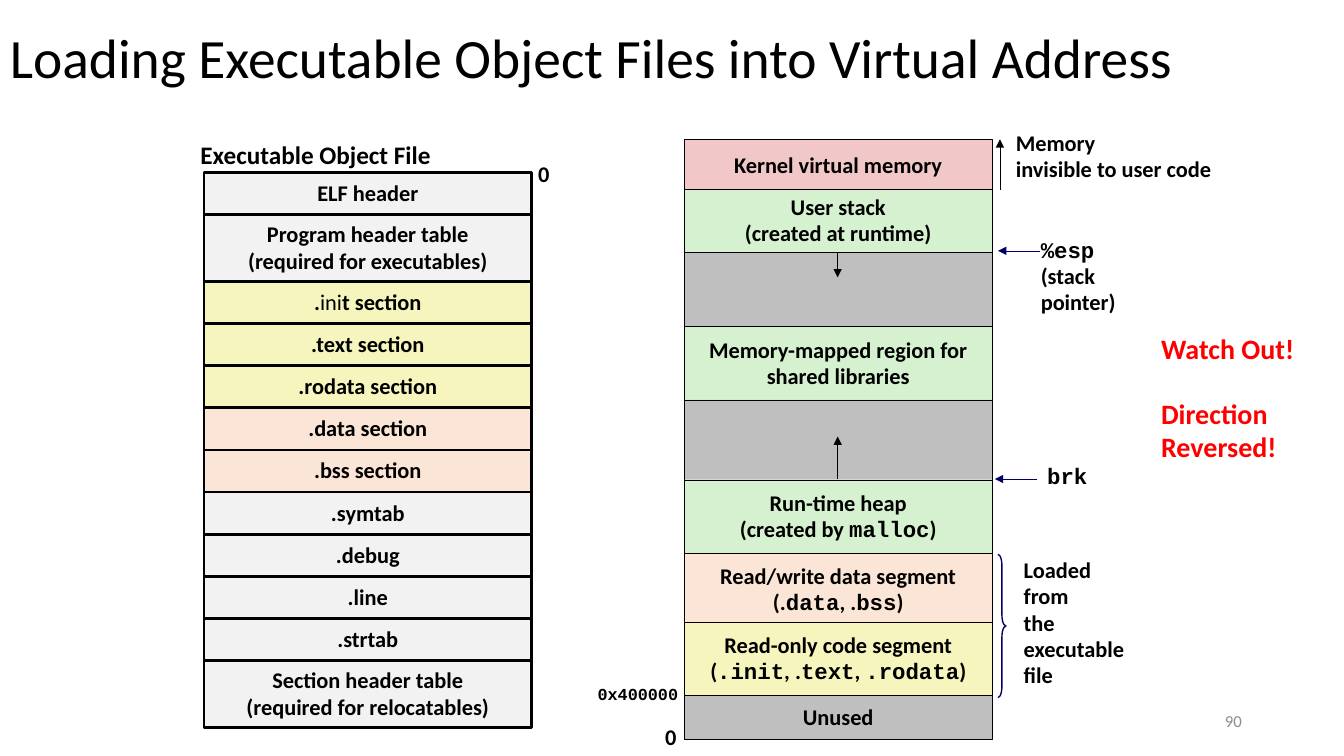
import pptx
import pptx.util
import pptx.dml.color
import pptx.enum.shapes
import pptx.enum.text
import pptx.oxml
import pptx.oxml.ns

Cm, Pt = pptx.util.Cm, pptx.util.Pt
RGBColor = pptx.dml.color.RGBColor
MSO_SHAPE = pptx.enum.shapes.MSO_SHAPE
PP_ALIGN = pptx.enum.text.PP_ALIGN
MSO_ANCHOR = pptx.enum.text.MSO_ANCHOR
MSO_AUTO_SIZE = pptx.enum.text.MSO_AUTO_SIZE

BLACK = RGBColor(0x00, 0x00, 0x00)
NAVY = RGBColor(0x00, 0x00, 0x66)
RED = RGBColor(0xFF, 0x00, 0x00)
MUTED = RGBColor(0x8C, 0x8C, 0x8C)
LIGHT = RGBColor(0xF2, 0xF2, 0xF2)
GRAY = RGBColor(0xBF, 0xBF, 0xBF)
YELLOW = RGBColor(0xF6, 0xF5, 0xBD)
PEACH = RGBColor(0xFB, 0xE5, 0xD6)
GREEN = RGBColor(0xD5, 0xF1, 0xCF)
PINK = RGBColor(0xF1, 0xC7, 0xC7)

BODY_FONT, CODE_FONT = "Calibri", "Courier New"
CODE_MARK, THIN_MARK = "`", "~"

TITLE = "Loading Executable Object Files into Virtual Address"

FILE_SECTIONS = [
    (["ELF header"], LIGHT),
    (["Program header table", "(required for executables)"], LIGHT),
    ([".~ini~t section"], YELLOW),
    ([".text section"], YELLOW),
    ([".rodata section"], YELLOW),
    ([".data section"], PEACH),
    ([".bss section"], PEACH),
    ([".symtab"], LIGHT),
    ([".debug"], LIGHT),
    ([".line"], LIGHT),
    ([".strtab"], LIGHT),
    (["Section header table", "(required for relocatables)"], LIGHT),
]
FILE_LEFT, FILE_TOP, FILE_WIDTH = 5.14, 4.34, 8.26
ROW_HEIGHTS = {1: 1.06, 2: 1.7}

MEMORY_REGIONS = [
    (3.51, 1.34, ["Kernel virtual memory"], PINK),
    (6.35, 1.88, [], GRAY),
    (4.78, 1.57, ["User stack", "(created at runtime)"], GREEN),
    (8.23, 1.85, ["Memory-mapped region for", "shared libraries"], GREEN),
    (10.08, 2.01, [], GRAY),
    (12.09, 1.85, ["Run-time heap", "(created by `malloc`)"], GREEN),
    (13.94, 1.85, ["Read/write data segment", "(.`data`, .`bss`)"], PEACH),
    (15.67, 1.85, ["Read-only code segment", "(`.init`, .`text`, `.rodata`)"], YELLOW),
    (17.52, 1.1, ["Unused"], GRAY),
]
MEMORY_LEFT, MEMORY_WIDTH = 17.25, 7.75
MEMORY_MIDDLE = 21.11

LABELS = [
    (4.78, 3.43, 6.35, 1.02, ["Executable Object File"], 18, PP_ALIGN.CENTER),
    (13.31, 3.94, 0.79, 0.94, ["0"], 16, PP_ALIGN.LEFT),
    (16.51, 18.14, 0.79, 0.94, ["0"], 16, PP_ALIGN.LEFT),
    (14.81, 17.15, 2.57, 0.76, ["`0x400000`"], 12, PP_ALIGN.LEFT),
    (25.35, 3.15, 7.11, 1.6, ["Memory", "invisible to user code"], 16, PP_ALIGN.LEFT),
    (25.98, 5.87, 2.41, 2.24, ["`%esp`", "(stack", "pointer)"], 16, PP_ALIGN.LEFT),
    (26.14, 11.58, 1.52, 0.91, ["`brk`"], 16, PP_ALIGN.LEFT),
    (25.55, 13.92, 3.2, 3.61, ["Loaded", "from", "the", "executable", "file"], 16, PP_ALIGN.LEFT),
]

ARROWS = [
    (MEMORY_MIDDLE, 12.07, MEMORY_MIDDLE, 11.0, BLACK),
    (MEMORY_MIDDLE, 6.35, MEMORY_MIDDLE, 6.99, BLACK),
    (25.2, 4.78, 25.2, 3.51, BLACK),
    (26.21, 6.32, 25.15, 6.32, NAVY),
    (26.14, 12.07, 25.07, 12.07, NAVY),
]


def write_lines(sp, lines, size, align=PP_ALIGN.LEFT, color=BLACK, bold=True, spacing=0.98):
    tf = sp.text_frame
    for n, line in enumerate(lines):
        p = tf.paragraphs[0] if n == 0 else tf.add_paragraph()
        p.alignment = align
        p.line_spacing = 0.94 if line.startswith(CODE_MARK) else spacing
        for i, part in enumerate(line.split(CODE_MARK)):
            for j, text in enumerate(part.split(THIN_MARK)):
                if text:
                    r = p.add_run()
                    r.text = text
                    r.font.name = CODE_FONT if i % 2 else BODY_FONT
                    r.font.size = Pt(size)
                    r.font.bold = bold and j % 2 == 0
                    r.font.color.rgb = color


def add_box(left, top, width, height, lines, fill, line_width):
    sp = slide.shapes.add_shape(MSO_SHAPE.RECTANGLE, Cm(left), Cm(top), Cm(width), Cm(height))
    sp.shadow.inherit = False
    sp.fill.solid()
    sp.fill.fore_color.rgb = fill
    sp.line.color.rgb = BLACK
    sp.line.width = Pt(line_width)
    sp.text_frame.word_wrap = False
    sp.text_frame.vertical_anchor = MSO_ANCHOR.MIDDLE
    write_lines(sp, lines, 16, PP_ALIGN.CENTER)


def add_text(left, top, width, height, wrap=True, anchor=MSO_ANCHOR.TOP):
    sp = slide.shapes.add_textbox(Cm(left), Cm(top), Cm(width), Cm(height))
    sp.text_frame.word_wrap = wrap
    sp.text_frame.vertical_anchor = anchor
    return sp


def add_arrow(x1, y1, x2, y2, color):
    sp = slide.shapes.add_connector(
        pptx.enum.shapes.MSO_CONNECTOR.STRAIGHT, Cm(x1), Cm(y1), Cm(x2), Cm(y2))
    sp.line.color.rgb = color
    sp.line.width = Pt(0.25)
    ns = pptx.oxml.ns.nsdecls("a")
    sp.line._get_or_add_ln().append(pptx.oxml.parse_xml(f'<a:tailEnd {ns} type="triangle"/>'))
    sp._element.spPr.append(pptx.oxml.parse_xml(f"<a:effectLst {ns}/>"))


prs = pptx.Presentation()
prs.slide_width, prs.slide_height = Cm(33.87), Cm(19.05)
slide = prs.slides.add_slide(prs.slide_layouts[6])

title = add_text(0, -0.13, 31.55, 3.3, anchor=MSO_ANCHOR.MIDDLE)
write_lines(title, [TITLE], 39.6, bold=False, spacing=0.9)

top = FILE_TOP
for lines, fill in FILE_SECTIONS:
    height = ROW_HEIGHTS[len(lines)]
    add_box(FILE_LEFT, top, FILE_WIDTH, height, lines, fill, 2)
    top += height

for top, height, lines, fill in MEMORY_REGIONS:
    add_box(MEMORY_LEFT, top, MEMORY_WIDTH, height, lines, fill, 0.25)

for arrow in ARROWS:
    add_arrow(*arrow)

for left, top, width, height, lines, size, align in LABELS:
    sp = add_text(left, top, width, height, wrap=False)
    sp.text_frame.auto_size = MSO_AUTO_SIZE.SHAPE_TO_FIT_TEXT
    write_lines(sp, lines, size, align)

brace = slide.shapes.add_shape(MSO_SHAPE.RIGHT_BRACE, Cm(25.15), Cm(13.97), Cm(0.2), Cm(3.61))
brace.shadow.inherit = False
brace.fill.background()
brace.line.color.rgb = NAVY
brace.line.width = Pt(1)
brace.adjustments[0] = 1.42

warning = add_text(29.01, 8.26, 4.22, 3.61)
write_lines(warning, ["Watch Out!", "Direction Reversed!"], 20, color=RED)
warning.text_frame.paragraphs[0].space_after = Pt(23)

page_number = add_text(23.93, 17.65, 7.62, 1.02, anchor=MSO_ANCHOR.MIDDLE)
write_lines(page_number, ["90"], 12, PP_ALIGN.RIGHT, MUTED, bold=False, spacing=1.0)

prs.save("out.pptx")
